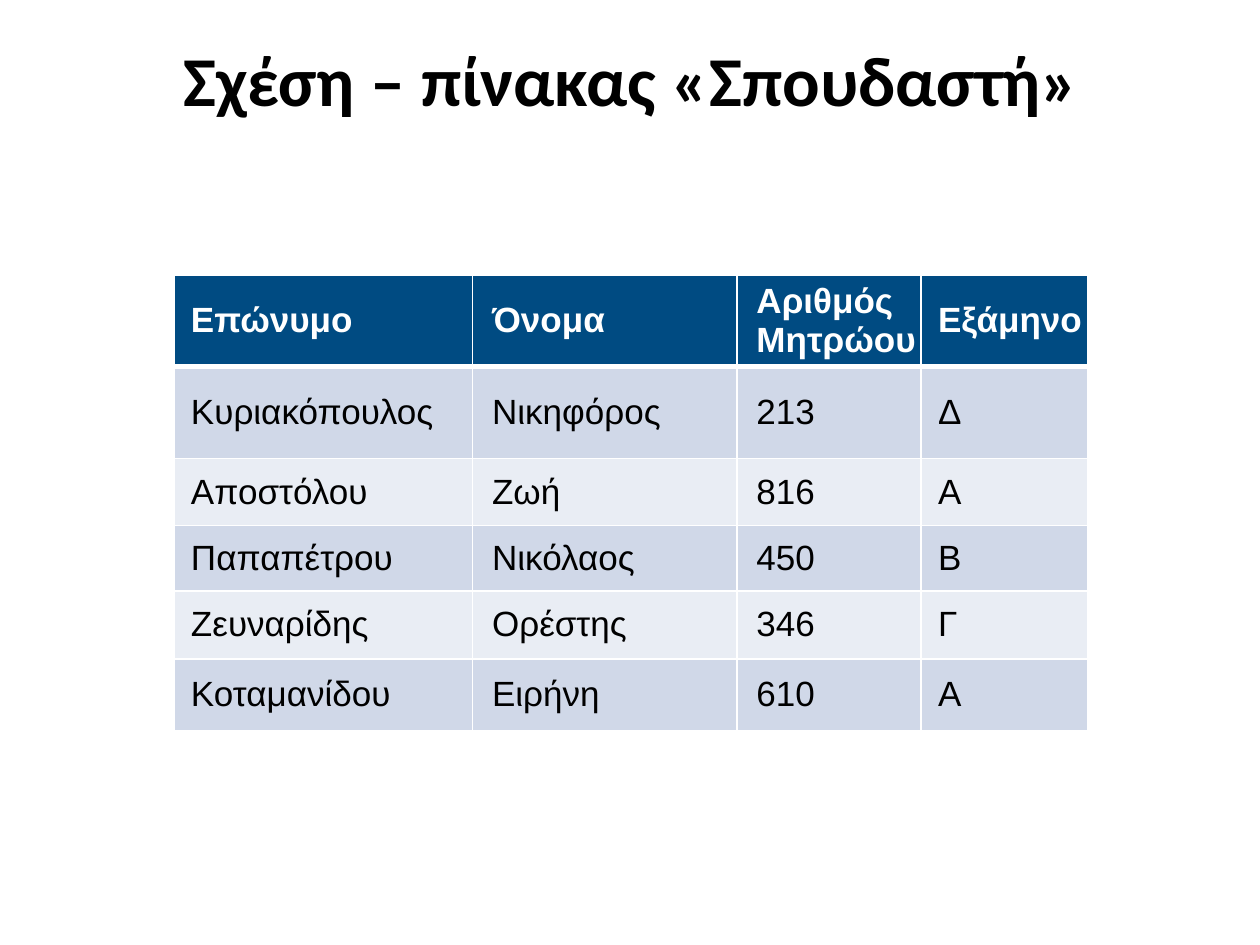
"""Build a slide with a table of students."""
from dataclasses import dataclass

from lxml import etree
from pptx import Presentation
from pptx.dml.color import RGBColor
from pptx.enum.text import MSO_ANCHOR, PP_ALIGN
from pptx.oxml.ns import qn
from pptx.util import Cm, Pt

MIDDLE = MSO_ANCHOR.MIDDLE
CENTER = PP_ALIGN.CENTER
WHITE, BLACK, NAVY = "FFFFFF", "000000", "004B82"
BANDS = ("D0D8E8", "E9EDF4")


@dataclass
class Column:
    head: str
    width: float
    indent: float
    items: tuple[str, ...]


COLUMNS = (
    Column("Επώνυμο", 6.02, 0.31,
           ("Κυριακόπουλος", "Αποστόλου", "Παπαπέτρου", "Ζευναρίδης", "Κοταμανίδου")),
    Column("Όνομα", 5.33, 0.36,
           ("Νικηφόρος", "Ζωή", "Νικόλαος", "Ορέστης", "Ειρήνη")),
    Column("Αριθμός Μητρώου", 3.71, 0.36, ("213", "816", "450", "346", "610")),
    Column("Εξάμηνο", 3.35, 0.31, ("Δ", "A", "Β", "Γ", "A")),
)
HEIGHTS = (1.85, 1.85, 1.35, 1.32, 1.37, 1.45)


def color(code: str) -> RGBColor:
    return RGBColor.from_string(code)


def add_run(para, text: str, font: str, size: float, code: str, bold: bool) -> None:
    run = para.add_run()
    run.text = text
    run.font.name = font
    run.font.size = Pt(size)
    run.font.bold = bold
    run.font.color.rgb = color(code)


def add_border(cell, side: str, width: float) -> None:
    props = cell._tc.get_or_add_tcPr()
    line = etree.SubElement(props, qn(f"a:ln{side}"), w=str(Pt(width)))
    fill = etree.SubElement(line, qn("a:solidFill"))
    etree.SubElement(fill, qn("a:srgbClr"), val=WHITE)


def draw_cell(cell, text: str, row: int, indent: float) -> None:
    head = row == 0
    cell.vertical_anchor = MIDDLE
    cell.margin_left = cell.margin_right = Cm(0.03)
    cell.margin_top = cell.margin_bottom = 0
    widths = {"L": 1, "R": 1, "T": 3 if row == 1 else 1, "B": 3 if head else 1}
    for side, width in widths.items():
        add_border(cell, side, width)
    cell.fill.solid()
    cell.fill.fore_color.rgb = color(NAVY if head else BANDS[(row - 1) % 2])
    para = cell.text_frame.paragraphs[0]
    props = para._p.get_or_add_pPr()
    props.set("marL", str(Cm(indent)))
    props.set("indent", "0")
    add_run(para, text, "Arial", 20, WHITE if head else BLACK, head)


def draw_title(title, text: str) -> None:
    title.left, title.top = Cm(1.3), Cm(0.33)
    title.width, title.height = Cm(22.86), Cm(2.51)
    title.text_frame.vertical_anchor = MIDDLE
    para = title.text_frame.paragraphs[0]
    para.alignment = CENTER
    add_run(para, text, "Calibri", 40, BLACK, True)


def draw_table(slide, left: float, top: float) -> None:
    width = sum(col.width for col in COLUMNS)
    frame = slide.shapes.add_table(len(HEIGHTS), len(COLUMNS), Cm(left), Cm(top),
                                   Cm(width), Cm(sum(HEIGHTS)))
    table = frame.table
    for row, height in enumerate(HEIGHTS):
        table.rows[row].height = Cm(height)
    for place, col in enumerate(COLUMNS):
        table.columns[place].width = Cm(col.width)
        for row, text in enumerate((col.head, *col.items)):
            draw_cell(table.cell(row, place), text, row, col.indent)


def main() -> None:
    deck = Presentation()
    deck.slide_width, deck.slide_height = Cm(25.4), Cm(19.05)
    slide = deck.slides.add_slide(deck.slide_layouts[5])
    draw_title(slide.shapes.title, "Σχέση – πίνακας «Σπουδαστή»")
    draw_table(slide, 3.51, 5.54)
    deck.save("out.pptx")


if __name__ == "__main__":
    main()
